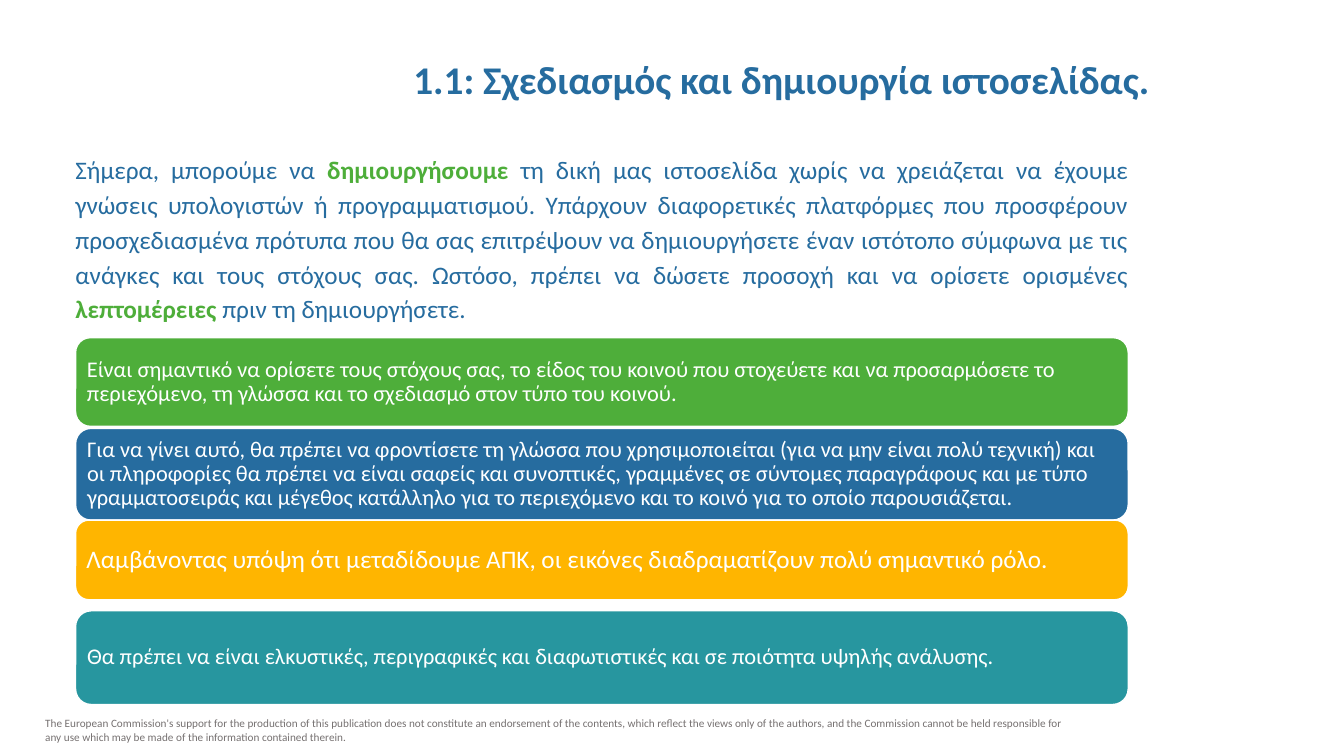
import pptx
import pptx.util
import pptx.dml.color
import pptx.enum.shapes
import pptx.enum.text
from dataclasses import dataclass

Inches = pptx.util.Inches
Align = pptx.enum.text.PP_ALIGN
Anchor = pptx.enum.text.MSO_ANCHOR
AutoSize = pptx.enum.text.MSO_AUTO_SIZE


@dataclass(frozen=True)
class Theme:
    font: str = "Calibri"
    blue: str = "266C9F"
    green: str = "4EAE3A"
    amber: str = "FFB500"
    teal: str = "27969F"
    gray: str = "767171"
    white: str = "FFFFFF"
    title_size: int = 28
    body_size: int = 18
    card_size: int = 16
    footer_size: int = 8


def rgb(color):
    return pptx.dml.color.RGBColor.from_string(color)


class SlideBuilder:
    def __init__(self, slide, theme):
        self.slide = slide
        self.theme = theme

    def style(self, paragraph, size, color, bold=False):
        paragraph.font.name = self.theme.font
        paragraph.font.size = pptx.util.Pt(size)
        paragraph.font.bold = bold
        paragraph.font.color.rgb = rgb(color)

    def text(self, box, pieces, size, color, align=Align.LEFT, bold=False,
             anchor=Anchor.TOP, grow=False, line_spacing=None, space_after=0):
        """Add a text box; pieces are (wording, highlighted) pairs."""
        frame = self.slide.shapes.add_textbox(*map(Inches, box)).text_frame
        frame.word_wrap = True
        frame.auto_size = AutoSize.SHAPE_TO_FIT_TEXT if grow else AutoSize.NONE
        frame.vertical_anchor = anchor
        paragraph = frame.paragraphs[0]
        paragraph.alignment = align
        paragraph.line_spacing = line_spacing
        paragraph.space_after = pptx.util.Pt(space_after)
        self.style(paragraph, size, color, bold)
        for wording, highlighted in pieces:
            run = paragraph.add_run()
            run.text = wording
            if highlighted:
                run.font.bold = True
                run.font.color.rgb = rgb(self.theme.green)

    def card(self, box, wording, size, color):
        """Add a rounded card with its text."""
        shape = self.slide.shapes.add_shape(
            pptx.enum.shapes.MSO_SHAPE.ROUNDED_RECTANGLE, *map(Inches, box))
        shape.shadow.inherit = False
        shape.fill.solid()
        shape.fill.fore_color.rgb = rgb(color)
        shape.line.color.rgb = rgb(self.theme.white)
        shape.line.width = pptx.util.Pt(1)
        frame = shape.text_frame
        frame.word_wrap = True
        frame.vertical_anchor = Anchor.MIDDLE
        frame.margin_left = frame.margin_right = Inches(0.07)
        frame.margin_top = frame.margin_bottom = Inches(0.07)
        paragraph = frame.paragraphs[0]
        paragraph.text = wording
        paragraph.alignment = Align.LEFT
        paragraph.line_spacing = 0.9
        self.style(paragraph, size, self.theme.white)


def main():
    theme = Theme()
    presentation = pptx.Presentation()
    presentation.slide_width = Inches(13.33)
    presentation.slide_height = Inches(7.5)
    slide = presentation.slides.add_slide(presentation.slide_layouts[6])
    builder = SlideBuilder(slide, theme)

    # Footer
    builder.text(
        (0.35, 7.06, 10.46, 0.37),
        [("The European Commission's support for the production of this publication "
          "does not constitute an endorsement of the contents, which reflect the views "
          "only of the authors, and the Commission cannot be held responsible for any "
          "use which may be made of the information contained therein.", False)],
        theme.footer_size, theme.gray, grow=True)

    # Title
    builder.text(
        (2.43, 0.35, 10.64, 0.79),
        [("1.1: Σχεδιασμός και δημιουργία ιστοσελίδας.", False)],
        theme.title_size, theme.blue, align=Align.CENTER, bold=True,
        anchor=Anchor.MIDDLE, line_spacing=1.15, space_after=10)

    # Introduction
    builder.text(
        (0.65, 1.44, 10.64, 1.84),
        [("Σήμερα, μπορούμε να ", False),
         ("δημιουργήσουμε", True),
         (" τη δική μας ιστοσελίδα χωρίς να χρειάζεται να έχουμε γνώσεις υπολογιστών "
          "ή προγραμματισμού. Υπάρχουν διαφορετικές πλατφόρμες που προσφέρουν "
          "προσχεδιασμένα πρότυπα που θα σας επιτρέψουν να δημιουργήσετε έναν ιστότοπο "
          "σύμφωνα με τις ανάγκες και τους στόχους σας. Ωστόσο, πρέπει να δώσετε "
          "προσοχή και να ορίσετε ορισμένες ", False),
         ("λεπτομέρειες", True),
         (" πριν τη δημιουργήσετε.", False)],
        theme.body_size, theme.blue, align=Align.JUSTIFY, grow=True,
        line_spacing=1.15, space_after=10)

    # Cards: top, height, colour, type size, wording
    cards = [
        (3.35, 0.88, theme.green, theme.card_size,
         "Είναι σημαντικό να ορίσετε τους στόχους σας, το είδος του κοινού που "
         "στοχεύετε και να προσαρμόσετε το περιεχόμενο, τη γλώσσα και το σχεδιασμό "
         "στον τύπο του κοινού."),
        (4.25, 0.91, theme.blue, theme.card_size,
         "Για να γίνει αυτό, θα πρέπει να φροντίσετε τη γλώσσα που χρησιμοποιείται "
         "(για να μην είναι πολύ τεχνική) και οι πληροφορίες θα πρέπει να είναι σαφείς "
         "και συνοπτικές, γραμμένες σε σύντομες παραγράφους και με τύπο γραμματοσειράς "
         "και μέγεθος κατάλληλο για το περιεχόμενο και το κοινό για το οποίο "
         "παρουσιάζεται."),
        (5.16, 0.79, theme.amber, theme.body_size,
         "Λαμβάνοντας υπόψη ότι μεταδίδουμε ΑΠΚ, οι εικόνες διαδραματίζουν πολύ "
         "σημαντικό ρόλο."),
        (6.06, 0.93, theme.teal, theme.card_size,
         "Θα πρέπει να είναι ελκυστικές, περιγραφικές και διαφωτιστικές και σε "
         "ποιότητα υψηλής ανάλυσης."),
    ]
    for top, height, color, size, wording in cards:
        builder.card((0.75, top, 10.44, height), wording, size, color)

    presentation.save("out.pptx")


if __name__ == "__main__":
    main()
